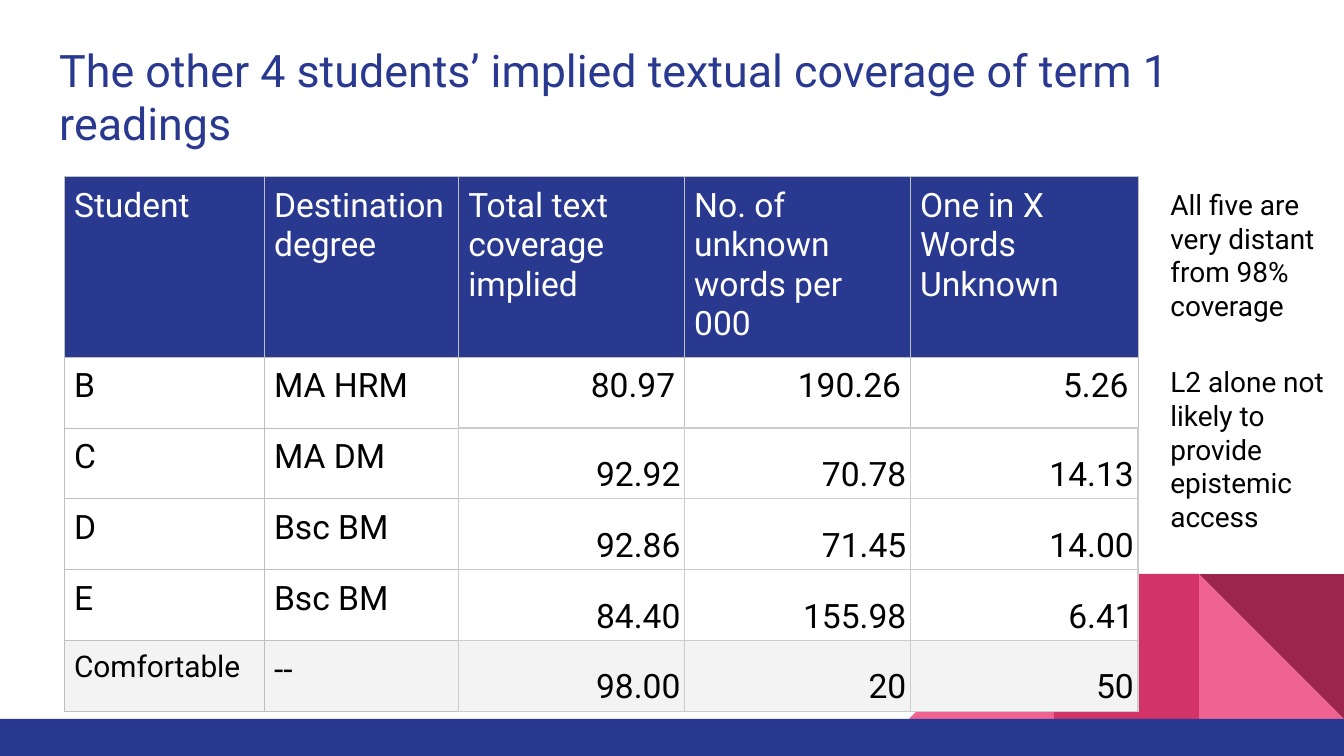
from lxml import etree
from pptx import Presentation
from pptx import util as u
from pptx.dml.color import RGBColor
from pptx.enum import shapes, text
from pptx.oxml import ns

# Content
TITLE = "The other 4 students’ implied textual coverage of term 1 readings"
HEADER = ["Student", "Destination degree", "Total text coverage implied",
          "No. of unknown words per 000", "One in X Words Unknown"]
STUDENTS = [
    ["B", "MA HRM", "80.97", "190.26", "5.26"],
    ["C", "MA DM", "92.92", "70.78", "14.13"],
    ["D", "Bsc BM", "92.86", "71.45", "14.00"],
    ["E", "Bsc BM", "84.40", "155.98", "6.41"],
]
BENCHMARK = ["Comfortable", "--", "98.00", "20", "50"]
# text, left, top, width, height in cm
COMMENTS = [
    ("All five are very distant from 98% coverage", 21.87, 3.3, 3.38, 2.95),
    ("L2 alone not likely to provide epistemic access", 21.87, 6.65, 3.53, 3.84),
]

THEME = {
    "font": "Roboto",
    "navy": "2A3990", "pink": "F06292", "rose": "D23369", "wine": "9C254D",
    "white": "FFFFFF", "black": "000000", "gray": "F3F3F3",
    "label_border": ("BFBFBF", 0.5), "number_border": ("CCCCCC", 0.75),
    "title": 24, "cell": 18, "benchmark": 16, "comment": 15,
}

# Geometry in cm
SLIDE_WIDTH, SLIDE_HEIGHT = 25.4, 14.29
TILE, BAR_HEIGHT = 2.74, 0.7
BAR_TOP = SLIDE_HEIGHT - BAR_HEIGHT
COLUMN_WIDTHS = [3.78, 3.67, 4.27, 4.27, 4.3]
HEADER_HEIGHT, ROW_HEIGHT = 3.33, 1.34
LABEL_COLUMNS = 2


def color(name):
    return RGBColor.from_string(THEME[name])


def add_run(paragraph, content, size, color_name):
    run = paragraph.add_run()
    run.text = content
    run.font.name = THEME["font"]
    run.font.size = u.Pt(THEME[size])
    run.font.bold = False
    run.font.color.rgb = color(color_name)


def add_text(slide, content, box, size, color_name):
    frame = slide.shapes.add_textbox(*map(u.Cm, box)).text_frame
    frame.word_wrap = True
    frame.margin_left = frame.margin_right = u.Cm(0.25)
    frame.margin_top = frame.margin_bottom = u.Cm(0.25)
    add_run(frame.paragraphs[0], content, size, color_name)


def add_block(slide, kind, box, color_name):
    shape = slide.shapes.add_shape(kind, *map(u.Cm, box))
    shape.shadow.inherit = False
    shape.fill.solid()
    shape.fill.fore_color.rgb = color(color_name)
    shape.line.fill.background()
    return shape


def set_borders(cell, border):
    border_color, width = border
    properties = cell._tc.get_or_add_tcPr()
    for position, side in enumerate(("lnL", "lnR", "lnT", "lnB")):
        line = etree.Element(ns.qn("a:" + side), w=str(u.Pt(width)))
        fill = etree.SubElement(line, ns.qn("a:solidFill"))
        etree.SubElement(fill, ns.qn("a:srgbClr"), val=border_color)
        properties.insert(position, line)


def fill_cell(cell, content, row, column, last_row):
    is_header, is_benchmark = row == 0, row == last_row
    is_number = not is_header and column >= LABEL_COLUMNS
    at_bottom = is_number and row > 1
    background = "navy" if is_header else "gray" if is_benchmark else "white"
    cell.fill.solid()
    cell.fill.fore_color.rgb = color(background)
    set_borders(cell, THEME["number_border" if at_bottom else "label_border"])
    margin = u.Cm(0.08 if at_bottom else 0.18)
    cell.margin_left = cell.margin_right = margin
    cell.margin_top = cell.margin_bottom = margin
    paragraph = cell.text_frame.paragraphs[0]
    if is_number:
        paragraph.alignment = text.PP_ALIGN.RIGHT
    if at_bottom:
        cell.vertical_anchor = text.MSO_ANCHOR.BOTTOM
        paragraph.line_spacing = 1.15
    size = "benchmark" if is_benchmark and column == 0 else "cell"
    add_run(paragraph, content, size, "white" if is_header else "black")


def add_decoration(slide):
    triangle = shapes.MSO_SHAPE.RIGHT_TRIANGLE
    rectangle = shapes.MSO_SHAPE.RECTANGLE
    left, middle, right = (SLIDE_WIDTH - TILE * n for n in (3, 2, 1))
    top = BAR_TOP - TILE
    add_block(slide, triangle, (right, top, TILE, TILE), "pink")
    mirrored = add_block(slide, triangle, (left, top, TILE, TILE), "pink")
    mirrored._element.spPr.get_or_add_xfrm().set("flipH", "1")
    add_block(slide, rectangle, (middle, top, TILE, TILE), "rose")
    add_block(slide, triangle, (right, top, TILE, TILE), "wine").rotation = 180
    add_block(slide, rectangle, (0, BAR_TOP, SLIDE_WIDTH, BAR_HEIGHT), "navy")


def add_coverage_table(slide):
    rows = [HEADER, *STUDENTS, BENCHMARK]
    heights = [HEADER_HEIGHT] + [ROW_HEIGHT] * (len(rows) - 1)
    box = (1.22, 3.34, sum(COLUMN_WIDTHS), sum(heights))
    table = slide.shapes.add_table(len(rows), len(HEADER), *map(u.Cm, box)).table
    table.first_row = table.horz_banding = False
    for column, width in zip(table.columns, COLUMN_WIDTHS):
        column.width = u.Cm(width)
    for row, height in zip(table.rows, heights):
        row.height = u.Cm(height)
    for r, values in enumerate(rows):
        for c, value in enumerate(values):
            fill_cell(table.cell(r, c), value, r, c, len(rows) - 1)


def main():
    presentation = Presentation()
    presentation.slide_width = u.Cm(SLIDE_WIDTH)
    presentation.slide_height = u.Cm(SLIDE_HEIGHT)
    slide = presentation.slides.add_slide(presentation.slide_layouts[6])

    # Corner pattern and footer bar
    add_decoration(slide)
    # Title
    add_text(slide, TITLE, (0.87, 0.55, 23.67, 1.68), "title", "navy")
    # Coverage table
    add_coverage_table(slide)
    # Side comments
    for content, *box in COMMENTS:
        add_text(slide, content, box, "comment", "black")

    presentation.save("out.pptx")


if __name__ == "__main__":
    main()
